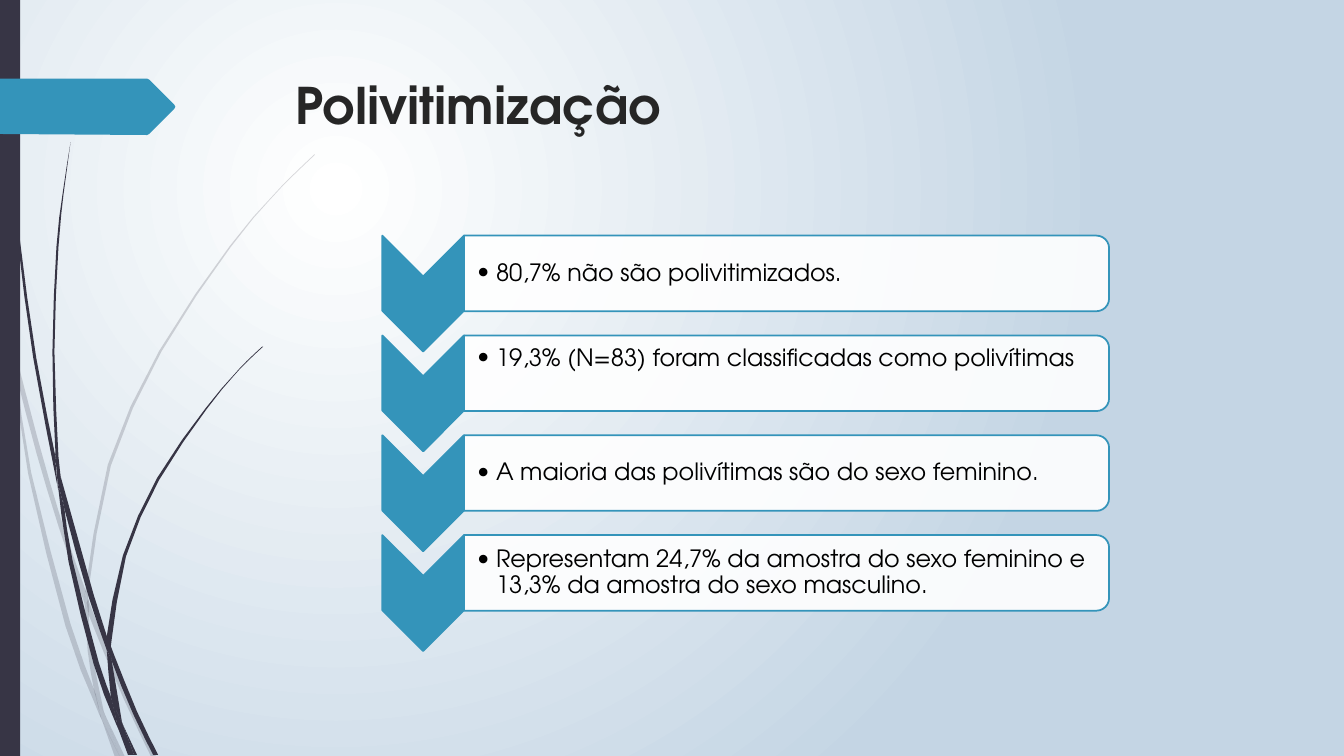
from lxml.etree import SubElement
from pptx import Presentation
from pptx.dml.color import RGBColor
from pptx.enum.shapes import MSO_SHAPE
from pptx.enum.text import MSO_ANCHOR
from pptx.oxml.ns import qn
from pptx.util import Pt

FONT = "TeX Gyre Adventor"
DARK, BLUE = "373545", "3494BA"
GRID = 0.72  # points per unit of the outlines below

# Each piece of grass has two edges: one going out, one coming back.
PALE_GRASS = [
    ([(11, 350), (9, 322), (0, 282)], [(0, 299), (10, 344)]),
    ([(17, 376), (36, 449), (58, 522), (84, 599)],
     [(85, 586), (62, 520), (37, 434), (14, 345)]),
    ([(88, 596), (88, 610), (123, 694), (150, 751)], [(155, 751), (127, 692), (92, 607)]),
    ([(119, 751), (124, 751)], [(105, 711)]),
    ([(11, 350), (28, 470), (65, 621), (92, 693), (101, 714)],
     [(99, 707), (93, 683), (70, 619), (31, 469), (17, 376)]),
    ([(84, 599), (87, 646), (93, 683), (96, 692), (105, 711)],
     [(103, 706), (91, 646), (88, 608)]),
    ([(88, 596), (88, 584), (110, 462), (160, 349), (229, 245), (268, 198),
      (290, 175), (312, 154)],
     [(312, 153), (289, 175), (268, 197), (228, 244), (158, 348), (107, 461),
      (85, 584), (85, 586)]),
    ([(101, 714), (114, 751)], [(119, 751)]),
    ([(88, 610), (88, 596), (85, 586)], [(84, 599), (88, 608)]),
    ([(93, 683), (99, 707), (101, 714), (119, 751)], [(105, 711), (96, 692)]),
]
DARK_GRASS = [
    ([(3, 0), (4, 48), (7, 110), (17, 233), (33, 355), (56, 477), (57, 481)],
     [(55, 457), (55, 453), (36, 355), (19, 232), (8, 109), (5, 48), (4, 0)]),
    ([(60, 472), (64, 505), (88, 592), (106, 645)], [(106, 631), (93, 590)]),
    ([(110, 641), (111, 656), (132, 708), (152, 749)], [(157, 749), (136, 706), (113, 649)]),
    ([(57, 477), (68, 557), (93, 659), (111, 708), (117, 722)],
     [(116, 717), (110, 691), (98, 657), (72, 556), (64, 505)]),
    ([(70, 141), (62, 193), (56, 245), (52, 349), (55, 449), (60, 472)],
     [(58, 453), (54, 349), (58, 245), (63, 193)]),
    ([(133, 749), (136, 749)], [(122, 719)]),
    ([(57, 477), (64, 505)], [(60, 472), (55, 449), (55, 453)]),
    ([(111, 633), (125, 552), (158, 476), (205, 406), (231, 374), (245, 359), (261, 344)],
     [(260, 344), (245, 358), (231, 373), (204, 405), (156, 474), (122, 551),
      (106, 631), (110, 641)]),
    ([(117, 722), (127, 749)], [(131, 749)]),
    ([(106, 645), (110, 691), (116, 706), (122, 719)], [(121, 716), (111, 656), (109, 651)]),
    ([(106, 645), (109, 651), (111, 656)], [(110, 641), (106, 631)]),
    ([(110, 691), (116, 717), (117, 722), (130, 749)], [(133, 749), (122, 719), (116, 706)]),
]
TAG = [(0, 78), (146, 78), (148, 79), (173, 104), (174, 106), (173, 108),
       (148, 133), (146, 134), (0, 133)]
FINDINGS = [
    ("80,7% não são polivitimizados.", 0),
    ("19,3% (N=83) foram classificadas como polivítimas", 20.7),
    ("A maioria das polivítimas são do sexo feminino.", 0),
    ("Representam 24,7% da amostra do sexo feminino e "
     "13,3% da amostra do sexo masculino.", 0),
]


def rgb(color):
    return RGBColor.from_string(color)


def paint(sp, fill, line=None, opacity=100):
    sp.shadow.inherit = False
    sp.fill.solid()
    sp.fill.fore_color.rgb = rgb(fill)
    if opacity < 100:
        clr = sp._element.spPr.find(qn("a:solidFill")).find(qn("a:srgbClr"))
        SubElement(clr, qn("a:alpha"), val=str(opacity * 1000))
    if line:
        sp.line.color.rgb = rgb(line)
        sp.line.width = Pt(1.25)
    else:
        sp.line.fill.background()


def add_preset(shapes, kind, x, y, w, h, fill, line=None, opacity=100, turned=False):
    """Place a preset in the box; a turned one is rotated 90° and still fills it."""
    if turned:
        x, y, w, h = x + (w - h) / 2, y + (h - w) / 2, h, w
    sp = shapes.add_shape(kind, Pt(x), Pt(y), Pt(w), Pt(h))
    sp.rotation = 90 if turned else 0
    paint(sp, fill, line, opacity)


def add_outline(shapes, x, y, points, fill, opacity=100):
    pts = [(Pt(x + GRID * px), Pt(y + GRID * py)) for px, py in points]
    fb = shapes.build_freeform(*pts[0])
    fb.add_line_segments(pts[1:], close=True)
    paint(fb.convert_to_shape(), fill, opacity=opacity)


def add_text(shapes, x, y, w, h, text, size, color, bold=False):
    sp = shapes.add_textbox(Pt(x), Pt(y), Pt(w), Pt(h))
    tf = sp.text_frame
    tf.word_wrap = True
    p = tf.paragraphs[0]
    r = p.add_run()
    r.text = text
    r.font.name, r.font.size, r.font.bold = FONT, Pt(size), bold
    r.font.color.rgb = rgb(color)
    return tf, p


def smooth(edge):
    """Add a Catmull-Rom midpoint between neighbouring points of an edge."""
    pts = [edge[0], *edge, edge[-1]]
    curve = [edge[0]]
    for a, b, c, d in zip(pts, pts[1:], pts[2:], pts[3:]):
        curve.append(tuple((9 * (q + v) - o - z) / 16 for o, q, v, z in zip(a, b, c, d)))
        curve.append(c)
    return curve


def add_background(s):
    fill = s.background.fill
    fill.gradient()
    for stop, color in zip(fill.gradient_stops, ("FFFFFF", "C4D5E4")):
        stop.color.rgb = rgb(color)
    lin = next(s._element.iter(qn("a:lin")))
    grad = lin.getparent()
    grad.remove(lin)
    circle = SubElement(grad, qn("a:path"), path="circle")
    SubElement(circle, qn("a:fillToRect"), l="50000", t="50000", r="100000", b="100000")


def add_side_decor(s, x, y, h):
    for pieces, opacity in ((PALE_GRASS, 20), (DARK_GRASS, 100)):
        grass = s.shapes.add_group_shape().shapes
        for out, back in pieces:
            add_outline(grass, x, y, smooth(out) + smooth(back), DARK, opacity)
    add_preset(s.shapes, MSO_SHAPE.RECTANGLE, x, y, 14.4, h, DARK)
    add_outline(s.shapes, x, y, TAG, BLUE)


def add_finding(shapes, x, y, w, h, text, lift):
    """A down chevron with a bulleted box; lift raises the text from the middle."""
    arrow_w, arrow_h = 58.3, 82.8
    add_preset(shapes, MSO_SHAPE.CHEVRON, x, y, arrow_w, arrow_h, BLUE, BLUE, turned=True)
    x, w = x + arrow_w, w - arrow_w
    add_preset(shapes, MSO_SHAPE.ROUND_2_SAME_RECTANGLE, x, y, w, h,
               "FFFFFF", BLUE, 90, turned=True)
    tf, p = add_text(shapes, x, y + 2.5, w - 2.8, h - 5, text, 17, "000000")
    tf.vertical_anchor = MSO_ANCHOR.MIDDLE
    tf.margin_left, tf.margin_top, tf.margin_right = Pt(9.4), Pt(0.7), Pt(0.7)
    tf.margin_bottom = Pt(0.7 + lift)
    p.line_spacing, p.space_after = 0.9, Pt(2.5)
    pPr = p._p.get_or_add_pPr()
    pPr.set("marL", str(Pt(13.5)))
    pPr.set("indent", str(Pt(-13.5)))
    SubElement(pPr, qn("a:buFont"), typeface=FONT)
    SubElement(pPr, qn("a:buChar"), char="•")


def add_findings(s, x, y, w, pitch):
    shapes = s.shapes.add_group_shape().shapes
    for i, (text, lift) in enumerate(FINDINGS):
        add_finding(shapes, x, y + i * pitch, w, 54, text, lift)


def main():
    prs = Presentation()
    prs.slide_width, prs.slide_height = Pt(960), Pt(540)
    s = prs.slides.add_slide(prs.slide_layouts[6])
    add_background(s)
    add_side_decor(s, 0, 0, 540)
    add_text(s.shapes, 204.2, 49.5, 702, 100, "Polivitimização", 36, "262626", bold=True)
    add_findings(s, 273.1, 168.3, 519.1, 71.3)
    prs.save("out.pptx")


if __name__ == "__main__":
    main()
